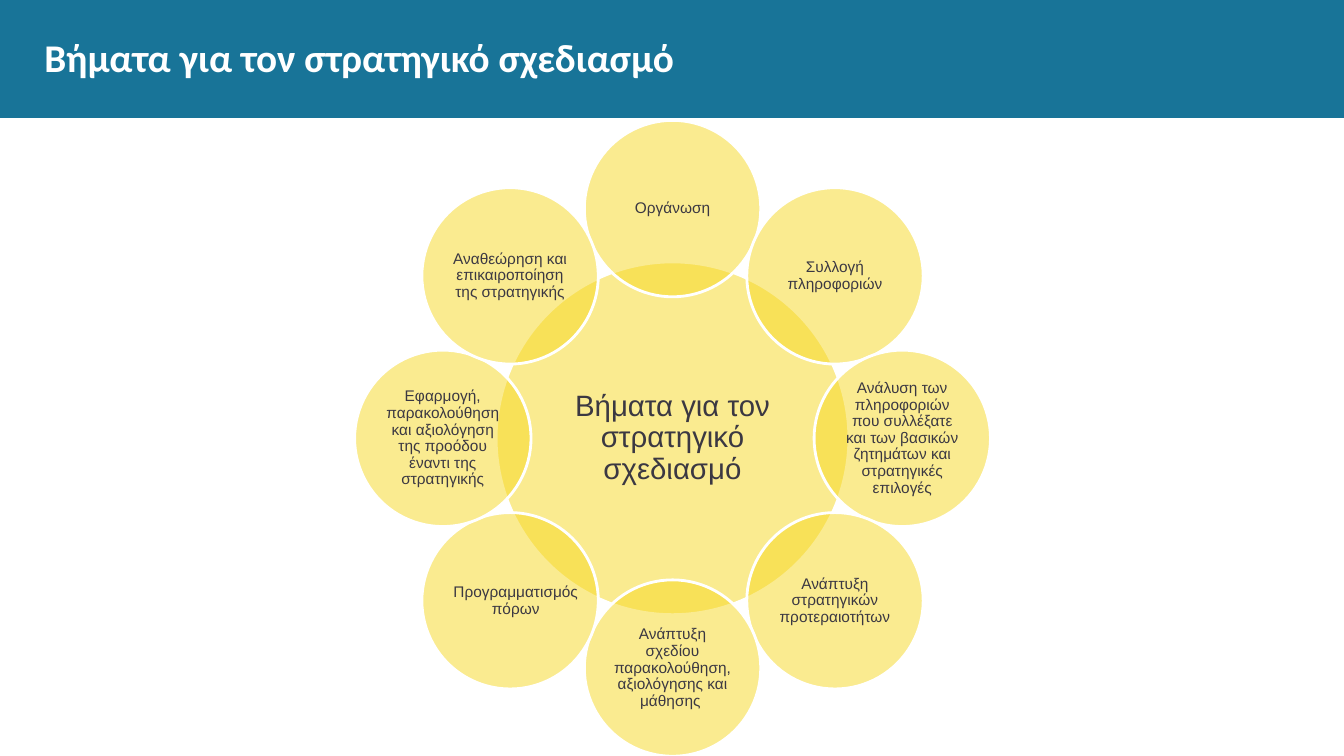
from math import cos, radians, sin, sqrt

from lxml.etree import SubElement
from pptx import Presentation
from pptx.dml.color import RGBColor
from pptx.enum.shapes import MSO_SHAPE as Preset
from pptx.enum.text import MSO_ANCHOR as Anchor, PP_ALIGN as Align
from pptx.oxml.ns import qn
from pptx.util import Pt

TEAL = RGBColor(0x18, 0x74, 0x98)
YELLOW = RGBColor(0xF7, 0xD8, 0x22)
WHITE = RGBColor(0xFF, 0xFF, 0xFF)
DARK = RGBColor(0x3B, 0x38, 0x42)

SLIDE_WIDTH, SLIDE_HEIGHT = 960, 540
CENTER_X, CENTER_Y = 480.4, 313.1
HUB_SIZE, STEP_SIZE = 252, 126
RING_RADIUS = 164.1
WIDE_LABEL = 97.2

TITLE = "Βήματα για τον στρατηγικό σχεδιασμό"
STEPS = [
    "Οργάνωση",
    "Συλλογή πληροφοριών",
    "Ανάλυση των πληροφοριών που συλλέξατε και των βασικών ζητημάτων και στρατηγικές επιλογές",
    "Ανάπτυξη στρατηγικών προτεραιοτήτων",
    "Ανάπτυξη σχεδίου παρακολούθηση, αξιολόγησης και μάθησης ",
    "Προγραμματισμός πόρων",
    "Εφαρμογή, παρακολούθηση και αξιολόγηση της προόδου έναντι της στρατηγικής",
    "Αναθεώρηση και επικαιροποίηση της στρατηγικής",
]
WIDE_STEP = "Προγραμματισμός πόρων"


def add_filled(slide, preset, left, top, width, height, color):
    shape = slide.shapes.add_shape(preset, Pt(left), Pt(top), Pt(width), Pt(height))
    shape.shadow.inherit = False
    shape.fill.solid()
    shape.fill.fore_color.rgb = color
    shape.line.fill.background()
    return shape


def add_text(slide, text, left, top, width, height, size, color,
             font="Arial", bold=False, align=Align.CENTER, spacing=0.9, inset=0):
    box = slide.shapes.add_textbox(Pt(left), Pt(top), Pt(width), Pt(height))
    frame = box.text_frame
    frame.word_wrap = True
    frame.vertical_anchor = Anchor.MIDDLE
    frame.margin_left = frame.margin_right = Pt(inset)
    frame.margin_top = frame.margin_bottom = Pt(inset)
    paragraph = frame.paragraphs[0]
    paragraph.alignment = align
    paragraph.line_spacing = spacing
    run = paragraph.add_run()
    run.text = text
    run.font.name = font
    run.font.size = Pt(size)
    run.font.bold = bold
    run.font.color.rgb = color


def add_circle(slide, text, center_x, center_y, diameter, size, inset, label_width=None):
    left, top = center_x - diameter / 2, center_y - diameter / 2
    circle = add_filled(slide, Preset.OVAL, left, top, diameter, diameter, YELLOW)
    color = circle.fill._xPr.find(qn("a:solidFill"))[0]
    SubElement(color, qn("a:alpha"), val="50000")
    circle.line.color.rgb = WHITE
    circle.line.width = Pt(2)
    side = diameter / sqrt(2)
    add_text(slide, text, center_x - side / 2, center_y - side / 2,
             label_width or side, side, size, DARK, inset=inset)


def add_header(slide):
    add_filled(slide, Preset.RECTANGLE, 0, 0, SLIDE_WIDTH, 84.2, TEAL)
    add_text(slide, TITLE, 31.7, 13.7, 897, 53.3, 28, WHITE,
             font="Calibri", bold=True, align=Align.LEFT, spacing=1.0)


def add_step_ring(slide):
    add_circle(slide, TITLE, CENTER_X, CENTER_Y, HUB_SIZE, 21, 2.1)
    for index, step in enumerate(STEPS):
        angle = radians(index * 360 / len(STEPS) - 90)
        add_circle(slide, step, CENTER_X + RING_RADIUS * cos(angle),
                   CENTER_Y + RING_RADIUS * sin(angle), STEP_SIZE, 11, 1.1,
                   WIDE_LABEL if step == WIDE_STEP else None)


def main():
    presentation = Presentation()
    presentation.slide_width = Pt(SLIDE_WIDTH)
    presentation.slide_height = Pt(SLIDE_HEIGHT)
    slide = presentation.slides.add_slide(presentation.slide_layouts[6])
    add_header(slide)
    add_step_ring(slide)
    presentation.save("out.pptx")


if __name__ == "__main__":
    main()
